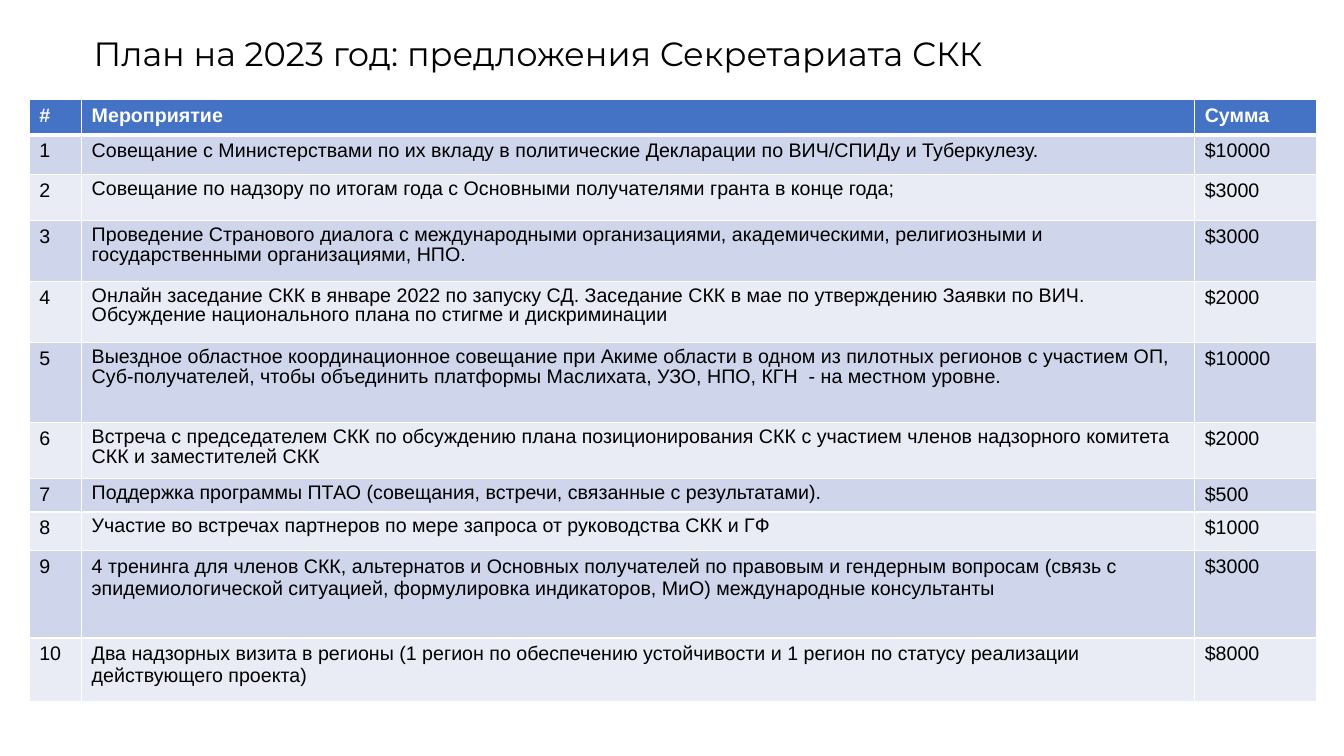
from lxml import etree
from pptx import Presentation
from pptx.dml.color import RGBColor
from pptx.enum.text import MSO_ANCHOR
from pptx.oxml import parse_xml
from pptx.util import Inches, Pt

NS = "http://schemas.openxmlformats.org/drawingml/2006/main"


def style(run, font, size, color, bold=False):
    run.font.name = font
    run.font.size = Pt(size)
    run.font.bold = bold
    run.font.color.rgb = RGBColor.from_string(color)


def edge(cell, widths):
    """Give a cell white borders; widths are points for left, right, top, bottom."""
    props = cell._tc.get_or_add_tcPr()
    for i, (side, width) in enumerate(zip("LRTB", widths)):
        props.insert(i, parse_xml(
            f'<a:ln{side} xmlns:a="{NS}" w="{Pt(width)}"><a:solidFill>'
            f'<a:srgbClr val="FFFFFF"/></a:solidFill></a:ln{side}>'))


deck = Presentation()
deck.slide_width = Inches(13.33)
deck.slide_height = Inches(7.5)
slide = deck.slides.add_slide(deck.slide_layouts[6])

# Activity, sum, row height
plan = [
    ("Совещание с Министерствами по их вкладу в политические Декларации по ВИЧ/СПИДу и Туберкулезу.",
     "$10000", 0.39),
    ("Совещание по надзору по итогам года с Основными получателями гранта в конце года;",
     "$3000", 0.46),
    ("Проведение Странового диалога с международными организациями, академическими, религиозными и "
     "государственными организациями, НПО.", "$3000", 0.6),
    ("Онлайн заседание СКК в январе 2022 по запуску СД. Заседание СКК в мае по утверждению Заявки по ВИЧ. "
     "Обсуждение национального плана по стигме и дискриминации", "$2000", 0.61),
    ("Выездное областное координационное совещание при Акиме области в одном из пилотных регионов с участием ОП, "
     "Суб-получателей, чтобы объединить платформы Маслихата, УЗО, НПО, КГН  - на местном уровне.",
     "$10000", 0.79),
    ("Встреча с председателем СКК по обсуждению плана позиционирования СКК с участием членов надзорного комитета "
     "СКК и заместителей СКК", "$2000", 0.56),
    ("Поддержка программы ПТАО (совещания, встречи, связанные с результатами).", "$500", 0.33),
    ("Участие во встречах партнеров по мере запроса от руководства СКК и ГФ", "$1000", 0.38),
    ("4 тренинга для членов СКК, альтернатов и Основных получателей по правовым и гендерным вопросам (связь с "
     "эпидемиологической ситуацией, формулировка индикаторов, МиО) международные консультанты",
     "$3000", 0.87),
    ("Два надзорных визита в регионы (1 регион по обеспечению устойчивости и 1 регион по статусу реализации "
     "действующего проекта)", "$8000", 0.63),
]
rows = [("#", "Мероприятие", "Сумма", 0.35)]
rows += [(str(n), *item) for n, item in enumerate(plan, 1)]

table = slide.shapes.add_table(len(rows), 3, Inches(0.29), Inches(0.99),
                               Inches(12.77), Inches(5.97)).table
for col, width in zip(table.columns, (0.52, 11.04, 1.21)):
    col.width = Inches(width)

for r, (*texts, height) in enumerate(rows):
    table.rows[r].height = Inches(height)
    head = r == 0
    fill = "4472C4" if head else ("E9EBF5", "CFD5EA")[r % 2]
    for c, text in enumerate(texts):
        cell = table.cell(r, c)
        cell.fill.solid()
        cell.fill.fore_color.rgb = RGBColor.from_string(fill)
        edge(cell, (1, 1, 3 if r == 1 else 1, 3 if head else 1))
        para = cell.text_frame.paragraphs[0]
        para.text = text
        style(para.runs[0], "Arial", 14, "FFFFFF" if head else "000000", head)
        if c == 1 and 2 <= r <= 8:
            para.line_spacing = 0.9
            para.space_before = Pt(10)

title = slide.shapes.add_textbox(Inches(0.83), Inches(0.36), Inches(11.5), Inches(0.39))
frame = title.text_frame
frame.word_wrap = True
frame.vertical_anchor = MSO_ANCHOR.MIDDLE
frame.text = "План на 2023 год: предложения Секретариата СКК"
para = frame.paragraphs[0]
para.line_spacing = 0.9
style(para.runs[0], "Montserrat", 24, "000000")

deck.save("out.pptx")
